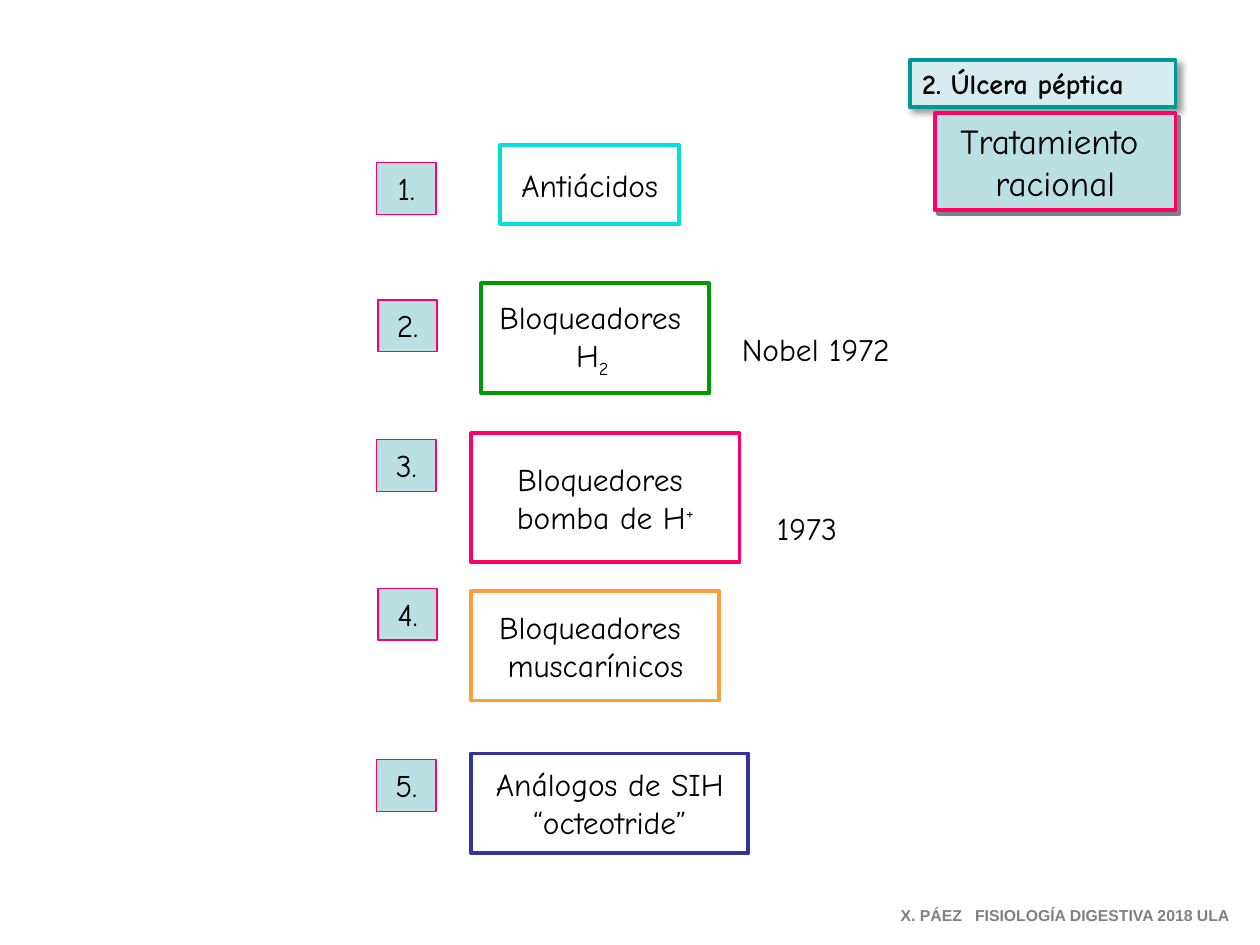
import pptx
import pptx.util
import pptx.dml.color
import pptx.enum.shapes
import pptx.enum.text
from lxml import etree
from pptx.util import Inches

COLORS = {
    "black": "000000", "white": "FFFFFF", "gray": "808080",
    "pale": "D6ECEE", "aqua": "BBE0E3", "teal": "009999",
    "pink": "FF0066", "cyan": "00DFDA", "green": "009900",
    "orange": "FF9D3B", "navy": "333399",
}
FONT = "Comic Neue"
ALIGN = pptx.enum.text.PP_ALIGN
ANCHOR = pptx.enum.text.MSO_ANCHOR
FIT = pptx.enum.text.MSO_AUTO_SIZE
NS = "http://schemas.openxmlformats.org/drawingml/2006/main"


def color(name):
    return pptx.dml.color.RGBColor.from_string(COLORS[name])


def write(shape, lines, size=18, font=FONT, ink="black", bold=False,
          align=ALIGN.CENTER, anchor=ANCHOR.TOP, grow=True, wrap=False):
    """Each line is a list of (text, baseline in percent) pairs or a string."""
    frame = shape.text_frame
    frame.word_wrap = wrap
    frame.auto_size = FIT.SHAPE_TO_FIT_TEXT if grow else FIT.NONE
    frame.vertical_anchor = anchor
    for i, line in enumerate(lines):
        para = frame.add_paragraph() if i else frame.paragraphs[0]
        para.alignment = align
        for text, base in [(line, 0)] if isinstance(line, str) else line:
            run = para.add_run()
            run.text = text
            run.font.size = pptx.util.Pt(size)
            run.font.name = font
            run.font.bold = bold
            run.font.color.rgb = color(ink)
            if base:
                run.font._element.set("baseline", str(base * 1000))


def add_box(slide, at, fill, line, width=2.25):
    kind = pptx.enum.shapes.MSO_SHAPE.RECTANGLE
    box = slide.shapes.add_shape(kind, *map(Inches, at))
    box.shadow.inherit = False
    box.fill.solid()
    box.fill.fore_color.rgb = color(fill)
    box.line.color.rgb = color(line)
    box.line.width = pptx.util.Pt(width)
    return box


def add_label(slide, at, text, **style):
    label = slide.shapes.add_textbox(*map(Inches, at))
    write(label, [text], **style)


def add_shadow(box, ink, alpha, blur, dist):
    effects = box._element.spPr.find(f"{{{NS}}}effectLst")
    shadow = etree.SubElement(
        effects, f"{{{NS}}}outerShdw", blurRad=str(pptx.util.Pt(blur)),
        dist=str(pptx.util.Pt(dist)), dir=str(45 * 60000),
        algn="tl", rotWithShape="0")
    tint = etree.SubElement(shadow, f"{{{NS}}}srgbClr", val=COLORS[ink])
    etree.SubElement(tint, f"{{{NS}}}alpha", val=str(alpha * 1000))


def main():
    deck = pptx.Presentation()
    deck.slide_width, deck.slide_height = Inches(10), Inches(7.5)
    slide = deck.slides.add_slide(deck.slide_layouts[6])

    # Topic and title
    topic = add_box(slide, (7.22, 0.48, 2.11, 0.37), "pale", "teal")
    add_shadow(topic, "black", 40, 4, 3)
    write(topic, ["2. Úlcera péptica"], size=16, bold=True, align=ALIGN.LEFT)
    title = add_box(slide, (7.42, 0.9, 1.91, 0.77), "aqua", "pink")
    add_shadow(title, "gray", 100, 0, 2.8)
    write(title, ["Tratamiento ", "racional"], size=20)

    # Treatments: place of the number, place of the box, line, text
    drugs = [
        ((2.99, 1.29), (3.97, 1.15, 1.42, 0.63), "cyan", ["Antiácidos"]),
        ((3, 2.38), (3.82, 2.25, 1.81, 0.87), "green",
         ["Bloqueadores ", [("H", 0), ("2 ", -25)]]),
        ((2.99, 3.49), (3.74, 3.44, 2.13, 1.02), "pink",
         ["Bloquedores ", [("bomba de H", 0), ("+", 30)]]),
        ((3, 4.67), (3.74, 4.69, 1.97, 0.87), "orange",
         ["Bloqueadores ", "muscarínicos"]),
        ((2.99, 6.03), (3.74, 5.98, 2.2, 0.79), "navy",
         ["Análogos de SIH", "“octeotride”"]),
    ]
    for num, (spot, at, line, lines) in enumerate(drugs, 1):
        tag = add_box(slide, (*spot, 0.47, 0.41), "aqua", "pink", 0.75)
        write(tag, [f"{num}."])
        box = add_box(slide, at, "white", line)
        write(box, lines, anchor=ANCHOR.MIDDLE, grow=False)

    # Years
    add_label(slide, (5.71, 2.57, 1.53, 0.4), "Nobel 1972")
    add_label(slide, (6.02, 3.99, 0.77, 0.4), "1973")

    # Footer
    add_label(slide, (7.05, 7.14, 2.86, 0.25),
              "X. PÁEZ   FISIOLOGÍA DIGESTIVA 2018 ULA",
              size=9, font="Arial", ink="gray", bold=True, align=ALIGN.LEFT)

    deck.save("out.pptx")


if __name__ == "__main__":
    main()
